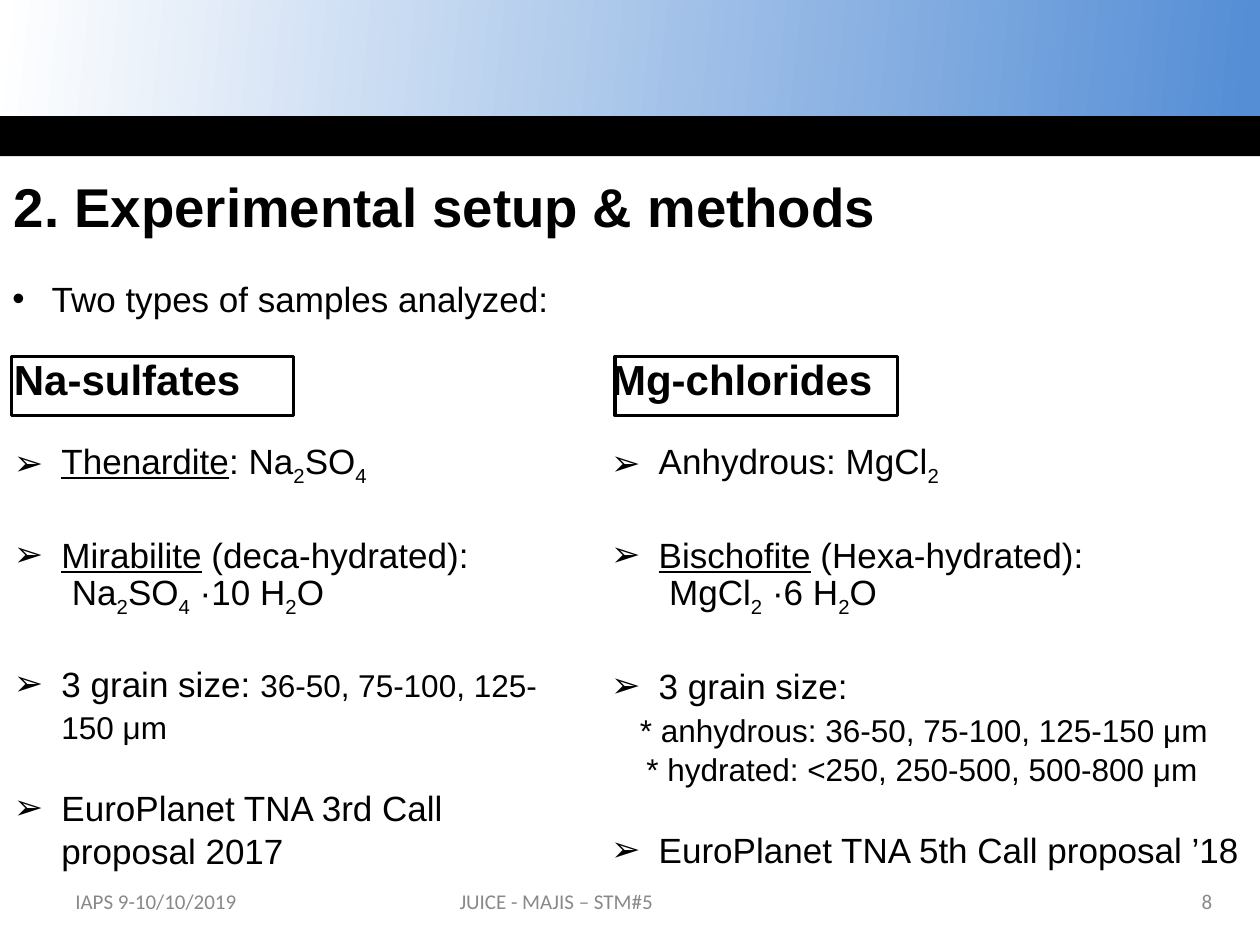
from lxml.etree import SubElement
from pptx import Presentation
from pptx.dml.color import RGBColor
from pptx.enum.shapes import MSO_SHAPE as Shape
from pptx.enum.text import MSO_ANCHOR as Anchor, PP_ALIGN as Align
from pptx.oxml.ns import qn
from pptx.util import Cm, Pt

BLACK = RGBColor(0, 0, 0)
WHITE = RGBColor(255, 255, 255)
BLUE = RGBColor(0x55, 0x8E, 0xD5)
GREY = RGBColor(0x89, 0x89, 0x89)

SUB, UNDER, SMALL = "sub", "under", "small"
LEADING = {24: 29.3, 20: 24.4, 18: 22.2}
ARROW = dict(bullet="➢", left=0.96)
FORMULA = dict(left=1.17)

TITLE = "2. Experimental setup & methods"
INTRO = "Two types of samples analyzed:"
COLUMNS = [
    (0.03, 11.63, [
        (["Na-sulfates"], dict(size=24, bold=True)),
        ([("Thenardite", UNDER), ": Na", ("2", SUB), "SO", ("4", SUB)], dict(ARROW, before=23)),
        ([("Mirabilite", UNDER), " (deca-hydrated):"], dict(ARROW, before=26)),
        (["Na", ("2", SUB), "SO", ("4", SUB), " ·10 H", ("2", SUB), "O"], FORMULA),
        (["3 grain size: ", ("36-50, 75-100, 125-150 μm", SMALL)],
         dict(ARROW, before=26, leading=23.5)),
        (["EuroPlanet TNA 3rd Call proposal 2017"], dict(ARROW, before=23)),
    ]),
    (12.07, 13.33, [
        (["Mg-chlorides"], dict(size=24, bold=True)),
        (["Anhydrous: MgCl", ("2", SUB)], dict(ARROW, before=23)),
        ([("Bischofite", UNDER), " (Hexa-hydrated):"], dict(ARROW, before=26)),
        (["MgCl", ("2", SUB), " ·6 H", ("2", SUB), "O"], FORMULA),
        (["3 grain size:"], dict(ARROW, before=26)),
        (["* anhydrous: 36-50, 75-100, 125-150 μm"], dict(size=18, left=0.58, before=2)),
        (["* hydrated: <250, 250-500, 500-800 μm"], dict(size=18, left=0.71)),
        (["EuroPlanet TNA 5th Call proposal ’18"], dict(ARROW, before=23)),
    ]),
]
FRAME_LEFTS = [0.23, 12.4]
FOOTERS = [
    ("IAPS 9-10/10/2019", 1.27, 5.92, Align.LEFT),
    ("JUICE - MAJIS – STM#5", 7.19, 8.05, Align.CENTER),
    ("8", 23.22, 1.47, Align.RIGHT),
]

prs = Presentation()
prs.slide_width, prs.slide_height = Cm(25.4), Cm(19.05)
s = prs.slides.add_slide(prs.slide_layouts[6])


def add_text(p, runs, size=20, bold=False, color=BLACK, font="Arial", align=Align.LEFT,
             bullet=None, left=0, before=0, leading=None):
    p.alignment = align
    p.space_before = Pt(before)
    if leading or size in LEADING:
        p.line_spacing = Pt(leading or LEADING[size])
    pPr = p._p.get_or_add_pPr()
    pPr.set("marL", str(Cm(left)))
    pPr.set("indent", str(-Cm(left) if bullet else 0))
    if bullet:
        SubElement(pPr, qn("a:buFont")).set("typeface", "Arial")
        SubElement(pPr, qn("a:buChar")).set("char", bullet)
    for run in runs:
        text, kind = run if isinstance(run, tuple) else (run, None)
        r = p.add_run()
        r.text = text
        r.font.name, r.font.bold = font, bold
        r.font.size = Pt(18 if kind == SMALL else size)
        r.font.color.rgb = color
        if kind == UNDER:
            r.font.underline = True
        if kind == SUB:
            r.font._element.set("baseline", "-25000")


def add_box(x, y, w, h, paragraphs, anchor=Anchor.TOP):
    tf = s.shapes.add_textbox(Cm(x), Cm(y), Cm(w), Cm(h)).text_frame
    tf.word_wrap = True
    tf.vertical_anchor = anchor
    for i, (runs, fmt) in enumerate(paragraphs):
        add_text(tf.add_paragraph() if i else tf.paragraphs[0], runs, **fmt)


def add_rect(x, y, w, h, kind=Shape.RECTANGLE):
    sp = s.shapes.add_shape(kind, Cm(x), Cm(y), Cm(w), Cm(h))
    sp.shadow.inherit = False
    sp.line.fill.background()
    return sp


banner = add_rect(0, 0, 25.4, 2.79)
banner.fill.gradient()
banner.fill.gradient_angle = 174
for stop, color, position in zip(banner.fill.gradient_stops, (BLUE, WHITE), (0.01, 1)):
    stop.color.rgb, stop.position = color, position

bar = add_rect(0, 2.34, 25.4, 0.81, Shape.ROUNDED_RECTANGLE)
bar.adjustments[0] = 0
bar.fill.solid()
bar.fill.fore_color.rgb = BLACK

for text, x, w, align in FOOTERS:
    fmt = dict(size=12, color=GREY, font="Calibri", align=align)
    add_box(x, 17.65, w, 1.02, [([text], fmt)], Anchor.MIDDLE)

add_box(0, 5.46, 24.5, 1.12, [([INTRO], dict(bullet="•", left=0.79))])
for x, w, paragraphs in COLUMNS:
    add_box(x, 6.99, w, 10.59, paragraphs)

for x in FRAME_LEFTS:
    frame = add_rect(x, 7.19, 5.69, 1.19)
    frame.fill.background()
    frame.line.color.rgb = BLACK
    frame.line.width = Pt(2)

add_box(0.03, 3.23, 22.86, 1.85, [([TITLE], dict(size=31.2, bold=True))], Anchor.MIDDLE)

prs.save("out.pptx")
